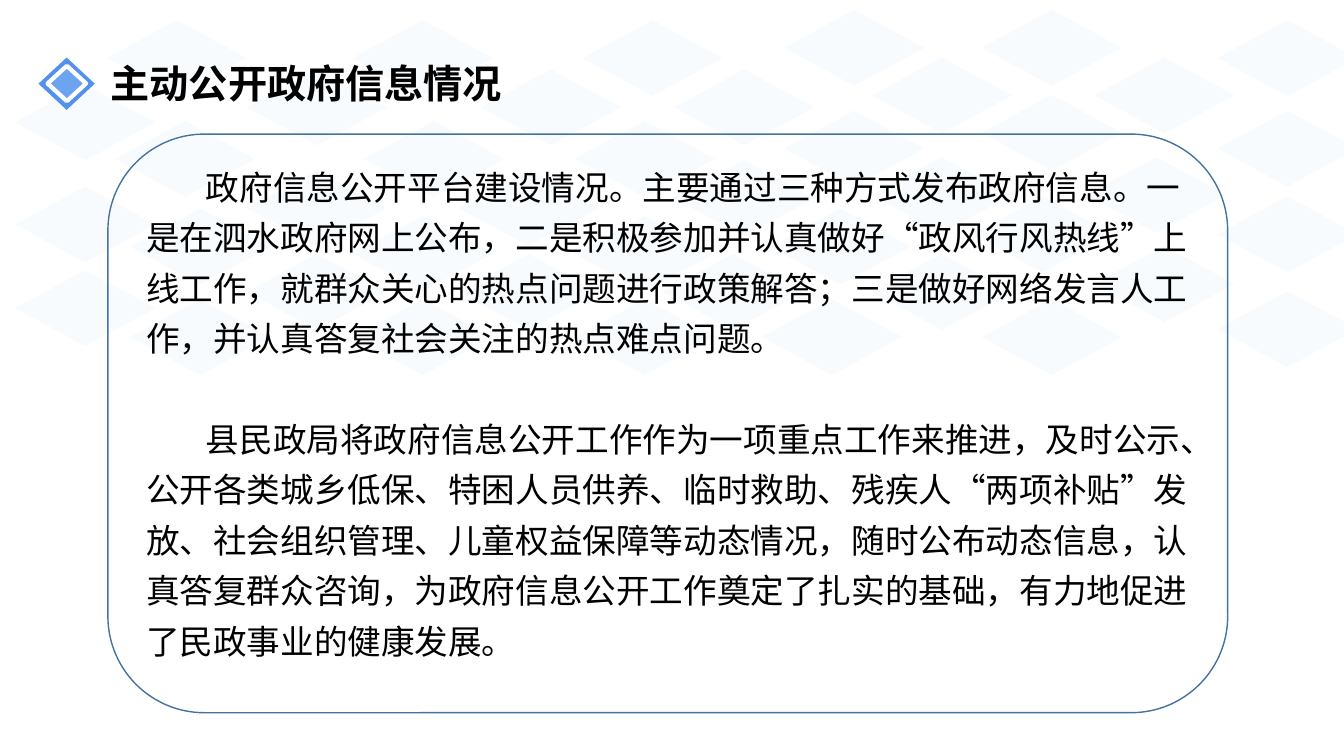
from pptx import Presentation
from pptx import util as u
from pptx.dml.color import RGBColor
from pptx.enum import shapes, text
from pptx.oxml.ns import qn
from lxml import etree

BLACK = RGBColor(0x00, 0x00, 0x00)
WHITE = RGBColor(0xFF, 0xFF, 0xFF)
PALE_BLUE = RGBColor(0xDE, 0xEB, 0xF7)
ICON_BLUE = RGBColor(0x53, 0x91, 0xED)
ICON_LIGHT = RGBColor(0x6C, 0xA4, 0xF0)
FRAME_BLUE = RGBColor(0x43, 0x73, 0x9E)

DIAMOND = shapes.MSO_SHAPE.DIAMOND
TILE_WIDTH, TILE_HEIGHT = 3.53, 1.91
TILE_COLUMNS = [
    (0.38, [2.13, 4.7, 6.81]),
    (2.69, [0.51]),
    (2.9, [3.05]),
    (3.28, [5.26, 7.54]),
    (6.22, [1.75, 4.29, 6.4]),
    (8.89, [0.51, 5.44, 7.54]),
    (9.17, [3.05]),
    (11.56, [4.29, 6.4]),
    (12.12, [1.75]),
    (14.48, [3.05, 5.44, 7.54]),
    (14.68, [0.51]),
    (16.71, [6.4]),
    (16.99, [1.75, 4.04]),
    (19.2, [7.54]),
    (19.41, [5.26]),
    (19.76, [0.25, 2.79]),
    (21.97, [1.45, 3.96, 6.4]),
    (24.51, [4.95]),
    (24.74, [0.25, 2.39, 7.54]),
    (27.38, [3.96]),
    (27.58, [1.45, 6.2]),
    (30.68, [0.51, 2.79, 4.95, 7.34]),
]

TITLE = "主动公开政府信息情况"
BODY = [
    "政府信息公开平台建设情况。主要通过三种方式发布政府信息。一是在泗水政府网上公布，"
    "二是积极参加并认真做好“政风行风热线”上线工作，就群众关心的热点问题进行政策解答；"
    "三是做好网络发言人工作，并认真答复社会关注的热点难点问题。",
    "县民政局将政府信息公开工作作为一项重点工作来推进，及时公示、公开各类城乡低保、"
    "特困人员供养、临时救助、残疾人“两项补贴”发放、社会组织管理、儿童权益保障等动态情况，"
    "随时公布动态信息，认真答复群众咨询，为政府信息公开工作奠定了扎实的基础，"
    "有力地促进了民政事业的健康发展。",
]


def add_shape(slide, kind, box, fill=None, alpha=None, line=None, line_width=1):
    shape = slide.shapes.add_shape(kind, *(u.Cm(length) for length in box))
    shape.shadow.inherit = False
    if fill is None:
        shape.fill.background()
    else:
        shape.fill.solid()
        shape.fill.fore_color.rgb = fill
    if alpha is not None:
        color = shape.fill._xPr.find(qn("a:solidFill"))[0]
        etree.SubElement(color, qn("a:alpha")).set("val", str(alpha * 1000))
    if line is None:
        shape.line.fill.background()
    else:
        shape.line.color.rgb = line
        shape.line.width = u.Pt(line_width)
    return shape


def write_text(paragraph, content, size, bold=False, color=BLACK,
               line_spacing=None, space_before=0, indent=0):
    paragraph.alignment = text.PP_ALIGN.LEFT
    paragraph.space_before = u.Pt(space_before)
    if line_spacing:
        paragraph.line_spacing = u.Pt(line_spacing)
    if indent:
        paragraph._p.get_or_add_pPr().set("indent", str(u.Cm(indent)))
    run = paragraph.add_run()
    run.text = content
    run.font.name = "Arial"
    run.font.size = u.Pt(size)
    run.font.bold = bold
    run.font.color.rgb = color


def add_background(slide, left, top):
    for column_left, tile_tops in TILE_COLUMNS:
        for tile_top in tile_tops:
            box = (left + column_left, top + tile_top, TILE_WIDTH, TILE_HEIGHT)
            add_shape(slide, DIAMOND, box, fill=PALE_BLUE, alpha=20)


def add_header(slide, left, top, width, height):
    title_offset = 1.57
    title_box = slide.shapes.add_textbox(
        u.Cm(left + title_offset), u.Cm(top), u.Cm(width - title_offset), u.Cm(height))
    title_box.text_frame.word_wrap = True
    write_text(title_box.text_frame.paragraphs[0], TITLE, size=28, bold=True)
    add_shape(slide, DIAMOND, (left, top + 0.08, 1.42, 1.32), fill=ICON_BLUE)
    add_shape(slide, DIAMOND, (left + 0.23, top + 0.29, 0.97, 0.89),
              fill=ICON_LIGHT, line=WHITE, line_width=3)


def add_body(slide, left, top, width, height):
    panel = add_shape(slide, shapes.MSO_SHAPE.ROUNDED_RECTANGLE,
                      (left, top, width, height), line=FRAME_BLUE)
    frame = panel.text_frame
    frame.word_wrap = True
    frame.vertical_anchor = text.MSO_ANCHOR.MIDDLE
    frame.margin_top = 0
    frame.margin_bottom = u.Cm(0.74)
    for index, content in enumerate(BODY):
        paragraph = frame.add_paragraph() if index else frame.paragraphs[0]
        write_text(paragraph, content, size=24, line_spacing=36,
                   space_before=36 if index else 0, indent=1.51)


def main():
    presentation = Presentation()
    presentation.slide_width = u.Cm(33.87)
    presentation.slide_height = u.Cm(19.05)
    slide = presentation.slides.add_slide(presentation.slide_layouts[6])
    add_background(slide, 0, 0)
    add_header(slide, 0.97, 1.37, 13.51, 1.45)
    add_body(slide, 2.72, 3.38, 28.22, 14.58)
    presentation.save("out.pptx")


if __name__ == "__main__":
    main()
